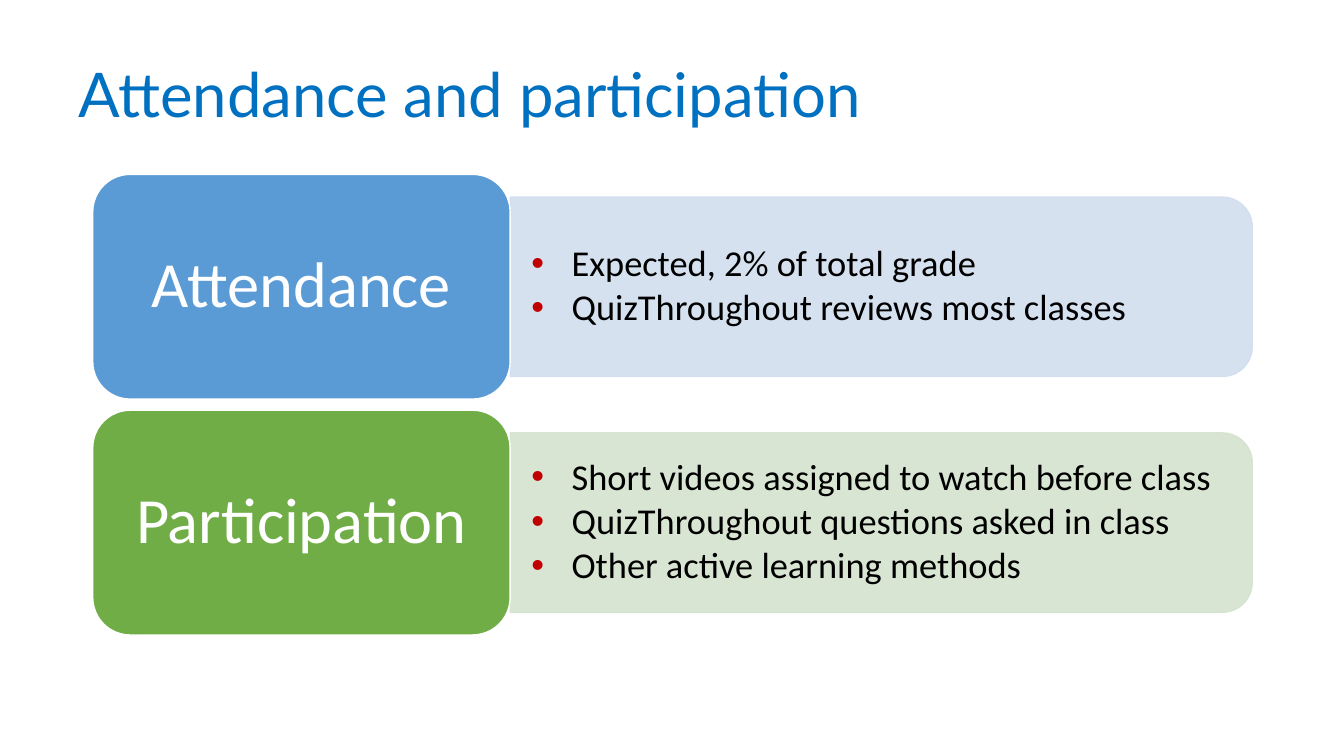
from lxml import etree
from pptx import Presentation
from pptx.dml.color import RGBColor
from pptx.enum import shapes, text
from pptx.oxml import ns
from pptx.util import Inches, Pt

CARD_LEFT, CARD_TOP, CARD_WIDTH, CARD_HEIGHT = 0.92, 1.73, 4.14, 2.23
ROW_STEP = 2.34
PANEL_WIDTH, PANEL_HEIGHT = 7.36, 1.78
BULLETS_WIDTH, BULLETS_HEIGHT = 7.27, 1.61
TOPICS = [
    ("Attendance", "5B9BD5", "D2DEEF",
     ["Expected, 2% of total grade",
      "QuizThroughout reviews most classes"]),
    ("Participation", "70AD47", "D5E3CF",
     ["Short videos assigned to watch before class",
      "QuizThroughout questions asked in class",
      "Other active learning methods"]),
]


def paint(color_format, color):
    """Set a colour format to a hex colour."""
    color_format.rgb = RGBColor.from_string(color)


def add_box(slide, kind, left, top, width, height, fill, line):
    """Add a filled and outlined preset shape without a shadow."""
    sp = slide.shapes.add_shape(kind, Inches(left), Inches(top), Inches(width), Inches(height))
    sp.shadow.inherit = False
    sp.fill.solid()
    paint(sp.fill.fore_color, fill)
    paint(sp.line.color, line)
    sp.line.width = Pt(1)
    return sp


def write(sp, lines, size, font, color, align, inset_x=0.1, inset_y=0.05):
    """Fill a shape with vertically centred paragraphs in one style."""
    tf = sp.text_frame
    tf.word_wrap = True
    tf.vertical_anchor = text.MSO_ANCHOR.MIDDLE
    tf.margin_left = tf.margin_right = Inches(inset_x)
    tf.margin_top = tf.margin_bottom = Inches(inset_y)
    tf.text = "\n".join(lines)
    for p in tf.paragraphs:
        p.alignment = align
        p.line_spacing = 0.9
        for r in p.runs:
            r.font.size = Pt(size)
            r.font.name = font
            paint(r.font.color, color)
    return tf


def add_text(slide, left, top, width, height, *style):
    """Add a text box and write styled lines into it."""
    sp = slide.shapes.add_textbox(Inches(left), Inches(top), Inches(width), Inches(height))
    return write(sp, *style)


def add_bullet(p, color):
    """Give a paragraph a coloured bullet with a hanging indent."""
    p.space_after = Pt(3.5)
    pPr = p._p.get_or_add_pPr()
    pPr.set("marL", str(Inches(0.5)))
    pPr.set("indent", str(Inches(-0.4)))
    bullet_color = etree.SubElement(pPr, ns.qn("a:buClr"))
    etree.SubElement(bullet_color, ns.qn("a:srgbClr"), val=color)
    etree.SubElement(pPr, ns.qn("a:buFont"), typeface="Arial")
    etree.SubElement(pPr, ns.qn("a:buChar"), char="•")


def add_panel(slide, middle, color):
    """Add a translucent panel rounded on its right side."""
    center = CARD_LEFT + CARD_WIDTH + PANEL_WIDTH / 2
    sp = add_box(slide, shapes.MSO_SHAPE.ROUND_2_SAME_RECTANGLE,
                 center - PANEL_HEIGHT / 2, middle - PANEL_WIDTH / 2,
                 PANEL_HEIGHT, PANEL_WIDTH, color, color)
    sp.rotation = 90
    for clr in sp._element.spPr.iter(ns.qn("a:srgbClr")):
        etree.SubElement(clr, ns.qn("a:alpha"), val="90000")


def add_topic(slide, top, name, card_color, panel_color, points):
    """Add a heading card with its panel of bullet points."""
    middle = top + CARD_HEIGHT / 2
    add_panel(slide, middle, panel_color)
    tf = add_text(slide, CARD_LEFT + CARD_WIDTH, middle - BULLETS_HEIGHT / 2,
                  BULLETS_WIDTH, BULLETS_HEIGHT, points, 26, "Calibri", "000000",
                  text.PP_ALIGN.LEFT, 0.11)
    for p in tf.paragraphs:
        add_bullet(p, "C00000")
    card = add_box(slide, shapes.MSO_SHAPE.ROUNDED_RECTANGLE, CARD_LEFT, top,
                   CARD_WIDTH, CARD_HEIGHT, card_color, "FFFFFF")
    write(card, [name], 46, "Calibri", "FFFFFF", text.PP_ALIGN.CENTER, 0.19, 0.1)


def main():
    """Build the slide and save it."""
    prs = Presentation()
    prs.slide_width, prs.slide_height = Inches(13.33), Inches(7.5)
    s = prs.slides.add_slide(prs.slide_layouts[6])
    add_text(s, 0.68, 0.4, 11.74, 1.14, ["Attendance and participation"],
             44, "Lato", "0070C0", text.PP_ALIGN.LEFT)
    for row, topic in enumerate(TOPICS):
        add_topic(s, CARD_TOP + row * ROW_STEP, *topic)
    prs.save("out.pptx")


if __name__ == "__main__":
    main()
